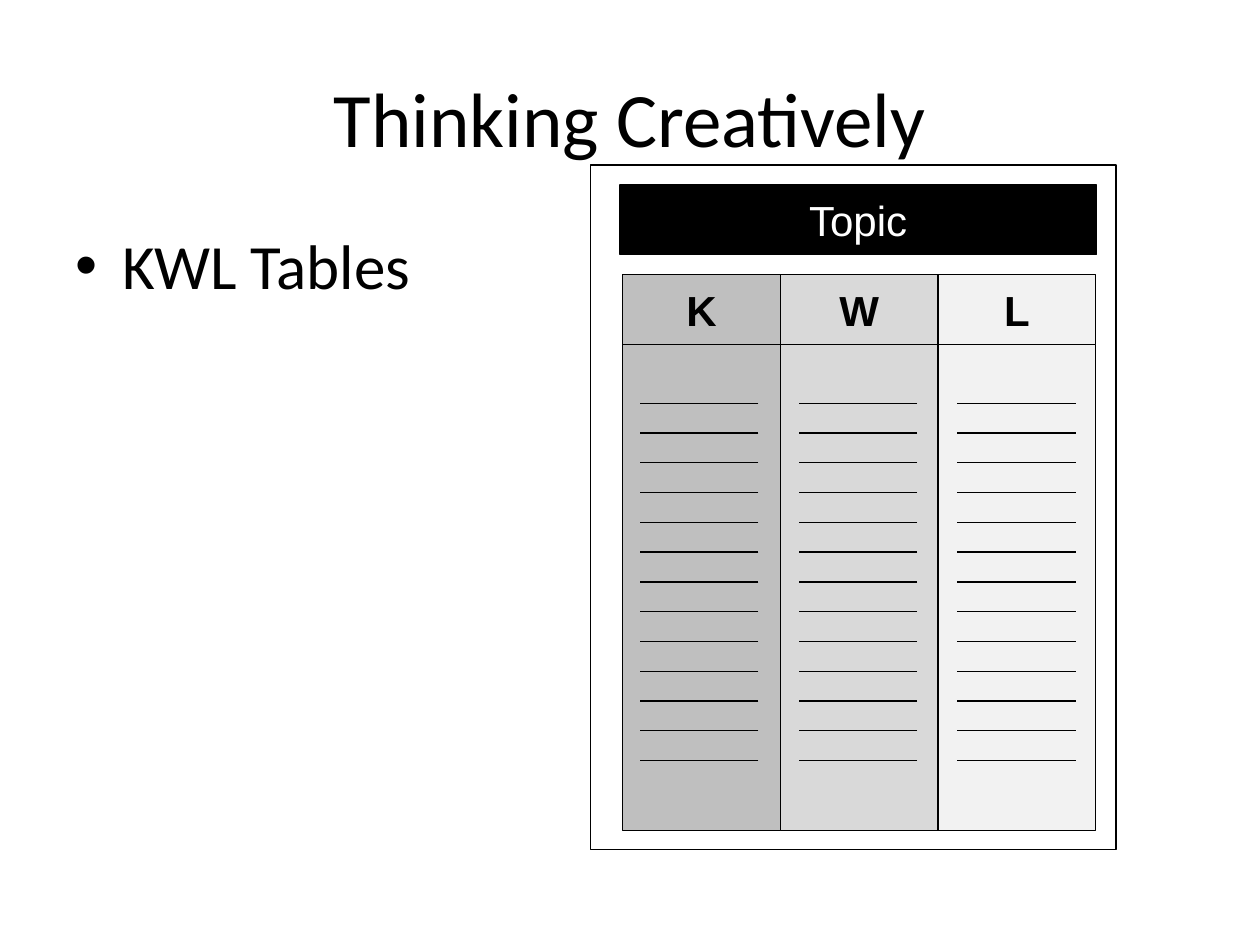
import pptx
import pptx.dml.color
import pptx.enum.shapes
import pptx.enum.text
import pptx.oxml.ns
import pptx.util
from lxml import etree

Cm = pptx.util.Cm
Pt = pptx.util.Pt
RGBColor = pptx.dml.color.RGBColor
PP_ALIGN = pptx.enum.text.PP_ALIGN
MSO_ANCHOR = pptx.enum.text.MSO_ANCHOR
qn = pptx.oxml.ns.qn

BLACK = RGBColor(0x00, 0x00, 0x00)
WHITE = RGBColor(0xFF, 0xFF, 0xFF)
DARK_GREY = RGBColor(0xBF, 0xBF, 0xBF)
MID_GREY = RGBColor(0xD9, 0xD9, 0xD9)
LIGHT_GREY = RGBColor(0xF2, 0xF2, 0xF2)

COLUMNS = [("K", DARK_GREY), ("W", MID_GREY), ("L", LIGHT_GREY)]
COLUMN_LEFT, COLUMN_WIDTH = 12.55, 3.18
HEAD_TOP, HEAD_HEIGHT = 5.54, 1.4
BODY_HEIGHT = 9.8
RULE_LEFT, RULE_PITCH, RULE_WIDTH = 12.9, 3.2, 2.39
RULE_TOP, RULE_GAP, RULE_COUNT = 8.13, 0.6, 13


def set_text(sp, text, size=24, font="Arial", color=BLACK, bold=False,
             align=PP_ALIGN.CENTER, anchor=MSO_ANCHOR.MIDDLE):
    tf = sp.text_frame
    tf.word_wrap = True
    tf.vertical_anchor = anchor
    p = tf.paragraphs[0]
    p.alignment = align
    r = p.add_run()
    r.text = text
    r.font.size = Pt(size)
    r.font.name = font
    r.font.bold = bold
    r.font.color.rgb = color
    return p


def add_bullet(p, indent):
    """Give the paragraph a round bullet with a hanging indent."""
    pPr = p._p.get_or_add_pPr()
    pPr.set("marL", str(indent))
    pPr.set("indent", str(-indent))
    etree.SubElement(pPr, qn("a:buFont")).set("typeface", "Arial")
    etree.SubElement(pPr, qn("a:buChar")).set("char", "•")


def add_title(s, text):
    sp = s.shapes.title
    sp.left, sp.top, sp.width, sp.height = Cm(1.27), Cm(0.76), Cm(22.86), Cm(3.18)
    set_text(sp, text, size=44, font="Calibri")


def add_bullet_text(s, text):
    sp = s.shapes.add_textbox(Cm(1.27), Cm(4.45), Cm(22.86), Cm(12.57))
    p = set_text(sp, text, size=36, font="Calibri",
                 align=PP_ALIGN.LEFT, anchor=MSO_ANCHOR.TOP)
    p.space_before = Pt(7.2)
    add_bullet(p, Cm(0.95))


def add_box(group, left, top, width, height, fill):
    sp = group.shapes.add_shape(pptx.enum.shapes.MSO_SHAPE.RECTANGLE,
                                Cm(left), Cm(top), Cm(width), Cm(height))
    sp.shadow.inherit = False
    sp.fill.solid()
    sp.fill.fore_color.rgb = fill
    sp.line.color.rgb = BLACK
    sp.line.width = Pt(0.75)
    return sp


def add_rule(group, left, top, width):
    line = group.shapes.add_connector(pptx.enum.shapes.MSO_CONNECTOR.STRAIGHT,
                                      Cm(left + width), Cm(top), Cm(left), Cm(top))
    line.line.color.rgb = BLACK
    line.line.width = Pt(0.75)
    etree.SubElement(line._element.spPr, qn("a:effectLst"))


def add_kwl_sheet(s):
    group = s.shapes.add_group_shape()
    add_box(group, 11.91, 3.33, 10.59, 13.79, WHITE)
    set_text(add_box(group, 12.5, 3.73, 9.6, 1.4, BLACK), "Topic", color=WHITE)
    for i, (letter, fill) in enumerate(COLUMNS):
        left = COLUMN_LEFT + i * COLUMN_WIDTH
        head = add_box(group, left, HEAD_TOP, COLUMN_WIDTH, HEAD_HEIGHT, fill)
        set_text(head, letter, bold=True)
        add_box(group, left, HEAD_TOP + HEAD_HEIGHT, COLUMN_WIDTH, BODY_HEIGHT, fill)
        for row in range(RULE_COUNT):
            add_rule(group, RULE_LEFT + i * RULE_PITCH,
                     RULE_TOP + row * RULE_GAP, RULE_WIDTH)


def main():
    prs = pptx.Presentation()
    prs.slide_width, prs.slide_height = Cm(25.4), Cm(19.05)
    s = prs.slides.add_slide(prs.slide_layouts.get_by_name("Title Only"))
    add_title(s, "Thinking Creatively")
    add_bullet_text(s, "KWL Tables")
    add_kwl_sheet(s)
    prs.save("out.pptx")


if __name__ == "__main__":
    main()
